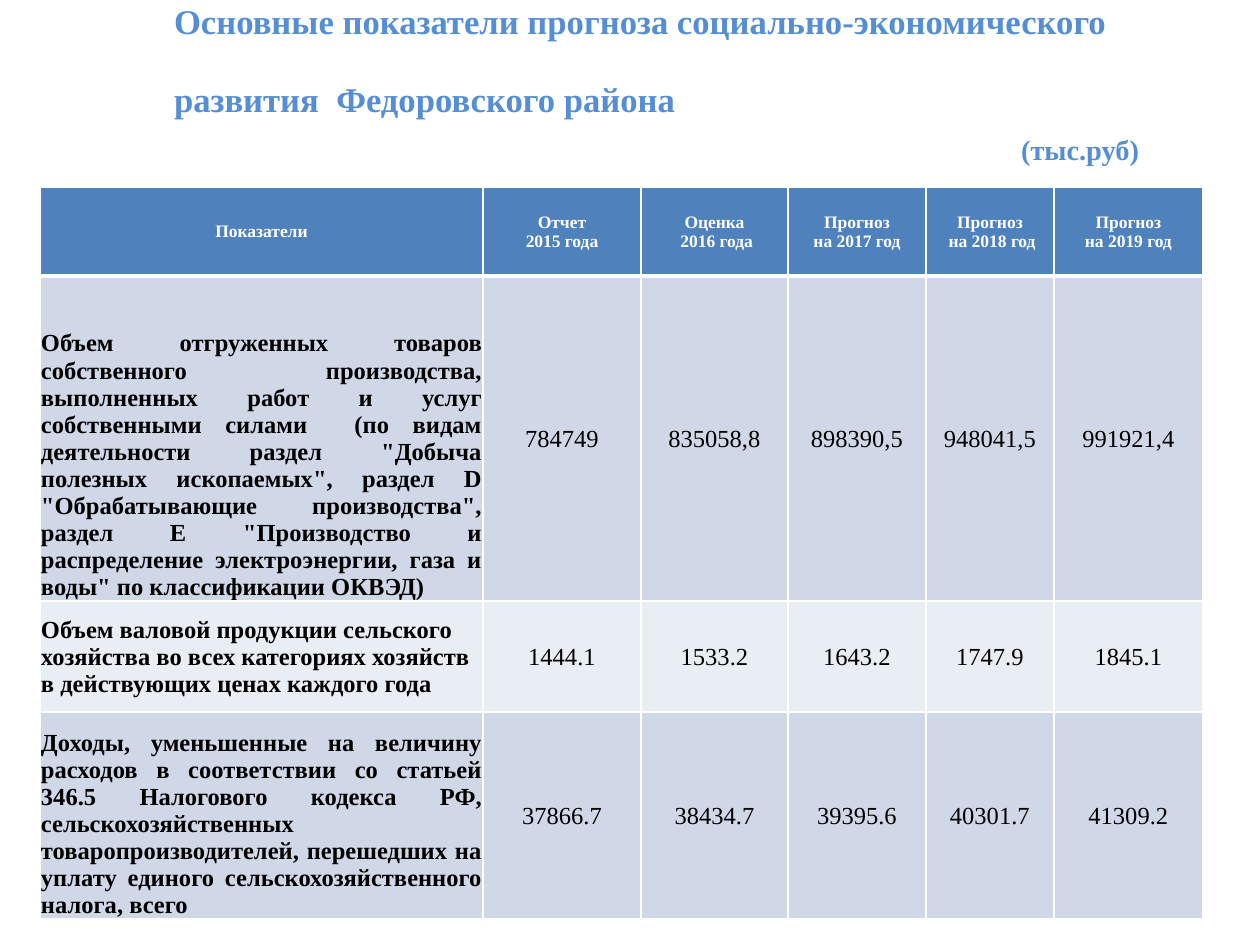
from lxml.etree import SubElement
from pptx import Presentation
from pptx.dml.color import RGBColor
from pptx.enum.text import MSO_ANCHOR, PP_ALIGN
from pptx.oxml.ns import qn
from pptx.util import Pt

FONT = "Times New Roman"
BLUE, WHITE, BLACK, HEAD = "558ED5", "FFFFFF", "000000", "4F81BD"
BANDS = ["D0D8E8", "E9EDF4"]
LEFT, MID, RIGHT, FULL = PP_ALIGN.LEFT, PP_ALIGN.CENTER, PP_ALIGN.RIGHT, PP_ALIGN.JUSTIFY

# Title lines: text, size, alignment, gap above in px
TITLE = [
    ("Основные показатели прогноза социально-экономического", 19.8, LEFT, 0),
    ("развития  Федоровского района", 19.8, LEFT, 36),
    ("(тыс.руб)", 16.2, RIGHT, 13),
]
HEADS = ["Показатели", "Отчет\n2015 года", "Оценка\n 2016 года",
         "Прогноз\nна 2017 год", "Прогноз\n на 2018 год", "Прогноз\nна 2019 год"]
# Rows: label, label alignment, label anchor, values
ROWS = [
    ('Объем отгруженных товаров собственного производства, выполненных работ и услуг '
     'собственными силами  (по видам деятельности раздел "Добыча полезных ископаемых", '
     'раздел D "Обрабатывающие производства", раздел E "Производство и распределение '
     'электроэнергии, газа и воды" по классификации ОКВЭД)', FULL, MSO_ANCHOR.BOTTOM,
     ["784749", "835058,8", "898390,5", "948041,5", "991921,4"]),
    ("Объем валовой продукции сельского хозяйства во всех категориях хозяйств "
     "в действующих ценах каждого года", LEFT, MSO_ANCHOR.MIDDLE,
     ["1444.1", "1533.2", "1643.2", "1747.9", "1845.1"]),
    ("Доходы, уменьшенные на величину расходов в соответствии со статьей 346.5 "
     "Налогового кодекса РФ, сельскохозяйственных товаропроизводителей, перешедших "
     "на уплату единого сельскохозяйственного налога, всего", FULL, MSO_ANCHOR.BOTTOM,
     ["37866.7", "38434.7", "39395.6", "40301.7", "41309.2"]),
]
WIDTHS = [443, 158, 147, 138, 128, 149]
HEIGHTS = [89, 325, 111, 204]


def px(n):
    return round(n * 914400 / 126)


def rgb(code):
    return RGBColor.from_string(code)


def write(para, text, size=14, color=BLACK, bold=False, align=MID, gap=0):
    para.text = text
    para.alignment = align
    para.space_before = px(gap)
    for run in para.runs:
        font = run.font
        font.name, font.size, font.bold = FONT, Pt(size), bold
        font.color.rgb = rgb(color)


def edge(cell, top, base):
    props = cell._tc.get_or_add_tcPr()
    sides = [("L", 1), ("R", 1), ("T", top), ("B", base)]
    for spot, (side, width) in enumerate(sides):
        line = SubElement(props, qn("a:ln" + side), w=str(Pt(width)))
        fill = SubElement(line, qn("a:solidFill"))
        SubElement(fill, qn("a:srgbClr"), val=WHITE)
        props.insert(spot, line)


def put(cell, text, fill, anchor=MSO_ANCHOR.MIDDLE, top=1, base=1, **look):
    cell.margin_left = cell.margin_right = cell.margin_top = px(1)
    cell.margin_bottom = 0
    cell.vertical_anchor = anchor
    cell.fill.solid()
    cell.fill.fore_color.rgb = rgb(fill)
    write(cell.text_frame.paragraphs[0], text, **look)
    edge(cell, top, base)


deck = Presentation()
deck.slide_width, deck.slide_height = px(1260), px(945)
slide = deck.slides.add_slide(deck.slide_layouts[6])

# Title
frame = slide.shapes.add_textbox(px(174), 0, px(965), px(164)).text_frame
frame.word_wrap = True
frame.margin_left = frame.margin_right = frame.margin_top = frame.margin_bottom = 0
for i, (text, size, align, gap) in enumerate(TITLE):
    para = frame.add_paragraph() if i else frame.paragraphs[0]
    write(para, text, size=size, color=BLUE, bold=True, align=align, gap=gap)

# Table grid
table = slide.shapes.add_table(len(HEIGHTS), len(WIDTHS), px(40), px(187),
                               px(sum(WIDTHS)), px(sum(HEIGHTS))).table
for col, width in zip(table.columns, WIDTHS):
    col.width = px(width)
for row, height in zip(table.rows, HEIGHTS):
    row.height = px(height)

# Header row
for c, text in enumerate(HEADS):
    put(table.cell(0, c), text, HEAD, base=3, size=10, color=WHITE, bold=True)

# Body rows
for r, (label, align, anchor, values) in enumerate(ROWS, 1):
    fill = BANDS[(r - 1) % 2]
    top = 3 if r == 1 else 1
    put(table.cell(r, 0), label, fill, anchor, top=top, bold=True, align=align)
    for c, value in enumerate(values, 1):
        put(table.cell(r, c), value, fill, top=top)

deck.save("out.pptx")
